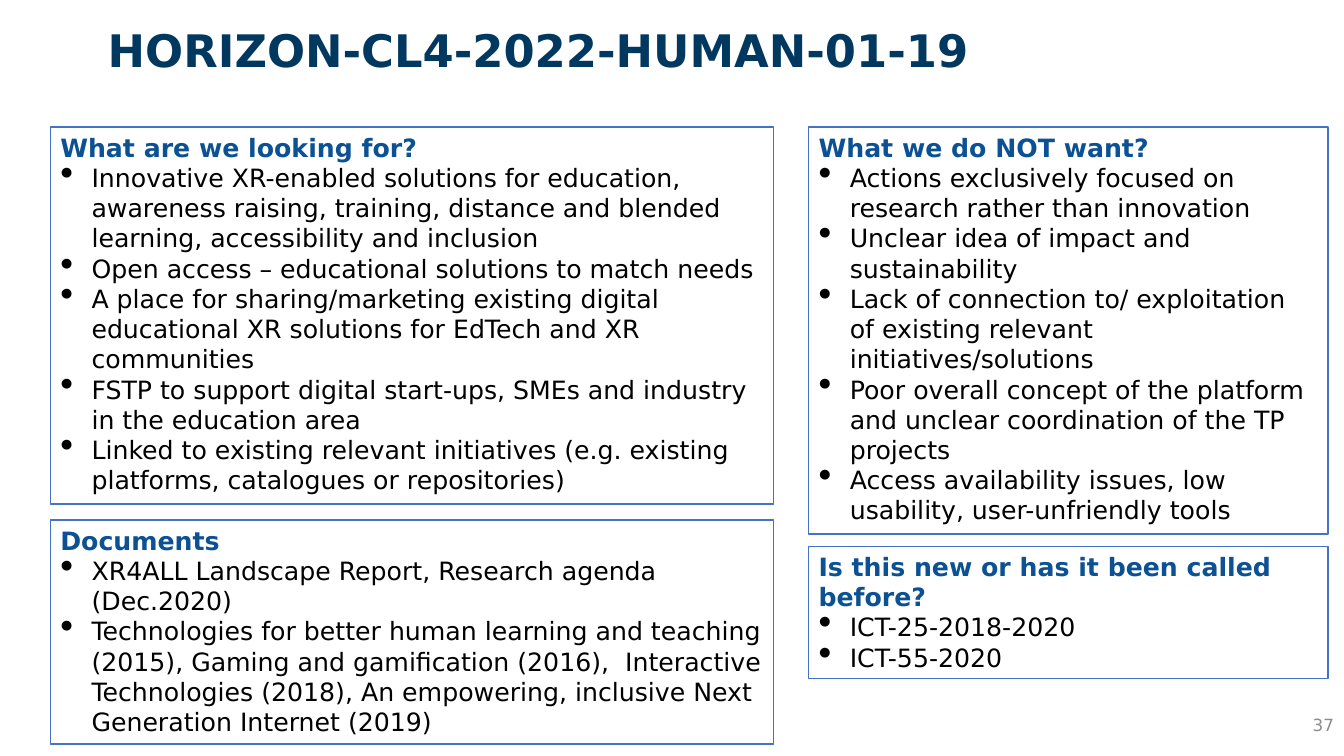
from lxml.etree import SubElement
from pptx import Presentation
from pptx.dml.color import RGBColor
from pptx.enum.shapes import MSO_SHAPE
from pptx.enum.text import MSO_ANCHOR, MSO_AUTO_SIZE, PP_ALIGN
from pptx.oxml.ns import qn
from pptx.util import Inches, Pt

FONT = "DejaVu Sans"
TITLE = "HORIZON-CL4-2022-HUMAN-01-19"
PAGE = "37"
LEFT, RIGHT = (0.5, 7.17), (8.02, 5.15)
PANELS = [
    (LEFT, 1.26, 3.74, "What are we looking for?", [
        "Innovative XR-enabled solutions for education, awareness raising, training, "
        "distance and blended learning, accessibility and inclusion",
        "Open access – educational solutions to match needs",
        "A place for sharing/marketing existing digital educational XR solutions "
        "for EdTech and XR communities",
        "FSTP to support digital start-ups, SMEs and industry in the education area",
        "Linked to existing relevant initiatives (e.g. existing platforms, "
        "catalogues or repositories)",
    ]),
    (LEFT, 5.16, 2.22, "Documents", [
        "XR4ALL Landscape Report, Research agenda (Dec.2020)",
        "Technologies for better human learning and teaching (2015), Gaming and "
        "gamification (2016),  Interactive Technologies (2018), An empowering, "
        "inclusive Next Generation Internet (2019)",
    ]),
    (RIGHT, 1.26, 4.04, "What we do NOT want?", [
        "Actions exclusively focused on research rather than innovation",
        "Unclear idea of impact and sustainability",
        "Lack of connection to/ exploitation of existing relevant initiatives/solutions",
        "Poor overall concept of the platform and unclear coordination of the TP projects",
        "Access availability issues, low usability, user-unfriendly tools",
    ]),
    (RIGHT, 5.42, 1.31, "Is this new or has it been called before?", [
        "ICT-25-2018-2020",
        "ICT-55-2020",
    ]),
]


def color(code):
    return RGBColor.from_string(code)


def write(para, text, size, code, bold=False):
    run = para.add_run()
    run.text = text
    font = run.font
    font.name, font.size, font.bold = FONT, Pt(size), bold
    font.color.rgb = color(code)


def bullet(para):
    props = para._p.get_or_add_pPr()
    indent = Inches(0.31)
    props.set("marL", str(indent))
    props.set("indent", str(-indent))
    SubElement(props, qn("a:buSzPct")).set("val", "150000")
    SubElement(props, qn("a:buChar")).set("char", "•")


def panel(slide, column, top, height, head, items):
    left, width = column
    box = slide.shapes.add_shape(
        MSO_SHAPE.RECTANGLE, Inches(left), Inches(top), Inches(width), Inches(height))
    box.shadow.inherit = False
    box.fill.background()
    box.line.color.rgb = color("4472C4")
    box.line.width = Pt(1)
    frame = box.text_frame
    frame.word_wrap = True
    frame.auto_size = MSO_AUTO_SIZE.SHAPE_TO_FIT_TEXT
    frame.vertical_anchor = MSO_ANCHOR.TOP
    para = frame.paragraphs[0]
    para.alignment = PP_ALIGN.LEFT
    write(para, head, 18, "0C5193", True)
    for item in items:
        para = frame.add_paragraph()
        para.alignment = PP_ALIGN.LEFT
        bullet(para)
        write(para, item, 18, "000000")


def label(slide, left, top, width, height):
    box = slide.shapes.add_textbox(
        Inches(left), Inches(top), Inches(width), Inches(height))
    return box.text_frame


def main():
    deck = Presentation()
    deck.slide_width, deck.slide_height = Inches(13.33), Inches(7.5)
    slide = deck.slides.add_slide(deck.slide_layouts[6])

    title = label(slide, 0.97, 0.18, 9.08, 0.64)
    title.word_wrap = False
    title.auto_size = MSO_AUTO_SIZE.SHAPE_TO_FIT_TEXT
    write(title.paragraphs[0], TITLE, 32, "003860", True)

    for spec_row in PANELS:
        panel(slide, *spec_row)

    page = label(slide, 10.33, 6.99, 3, 0.4)
    page.word_wrap = True
    page.vertical_anchor = MSO_ANCHOR.MIDDLE
    page.paragraphs[0].alignment = PP_ALIGN.RIGHT
    write(page.paragraphs[0], PAGE, 12, "8C8C8C")

    deck.save("out.pptx")


if __name__ == "__main__":
    main()
